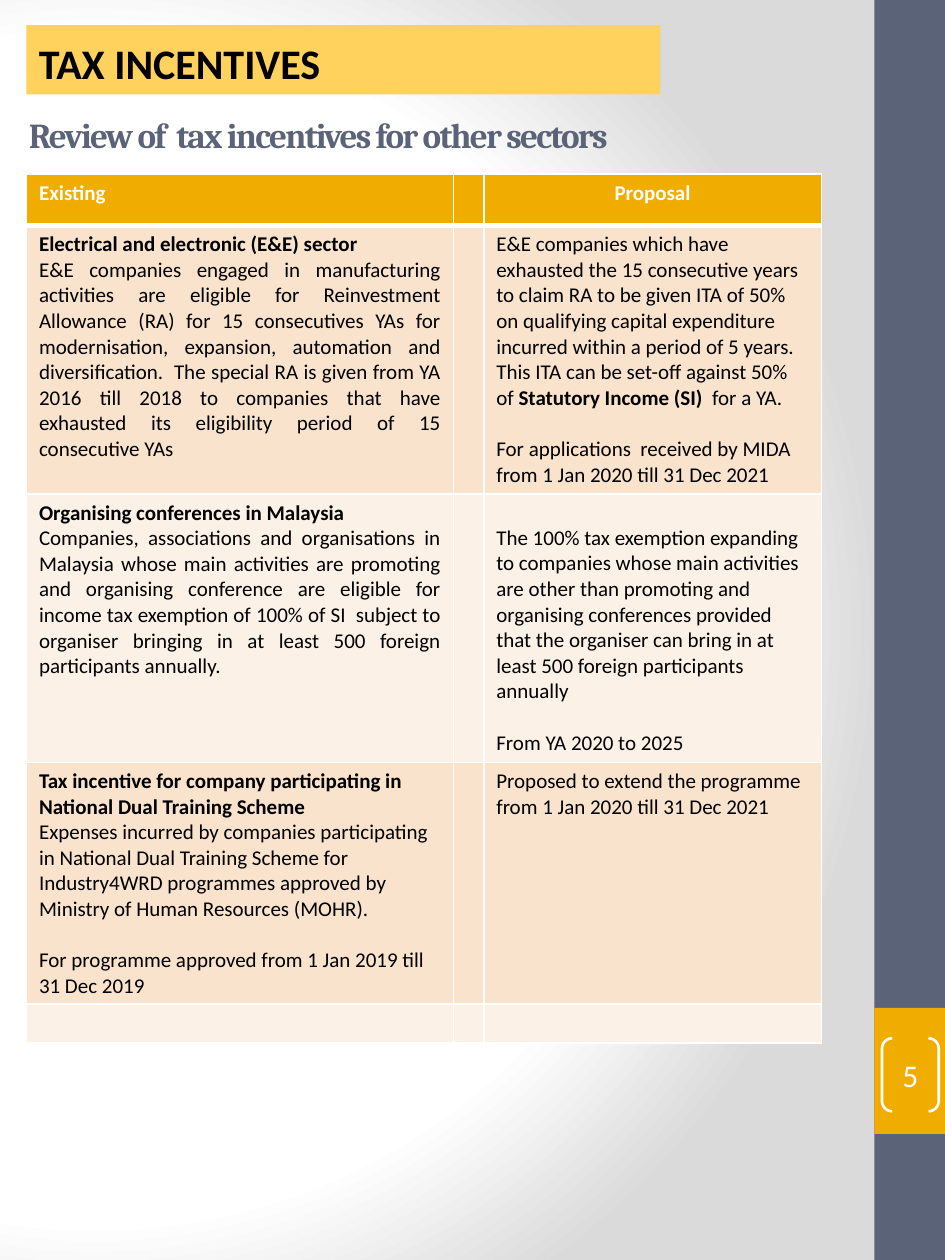
"""Build the slide on the review of tax incentives for other sectors."""
from dataclasses import dataclass

from lxml.etree import SubElement
from pptx import Presentation
from pptx.dml.color import RGBColor
from pptx.enum.shapes import MSO_SHAPE as Shape
from pptx.enum.text import MSO_ANCHOR as Anchor, PP_ALIGN as Align
from pptx.oxml import parse_xml
from pptx.oxml.ns import nsdecls, qn
from pptx.util import Inches, Pt

COLORS = {
    "white": "FFFFFF", "haze": "DADADA", "slate": "5A6378", "amber": "F0AD00",
    "banner": "FFD25D", "black": "000000", "peach": "F9E3CC", "cream": "FCF1E7",
}
BLANK_LINE = 14.65


@dataclass(frozen=True)
class Para:
    """A paragraph whose runs at odd positions are bold."""
    runs: tuple
    align: Align = Align.LEFT
    gap: float = 0


@dataclass(frozen=True)
class Cell:
    """A table cell with its paragraphs and top margin."""
    paras: tuple = ()
    top: float = 0.05


@dataclass(frozen=True)
class Row:
    """A table row with its height, fill and outer cells."""
    height: float
    fill: str
    existing: Cell = Cell()
    proposal: Cell = Cell()
    ink: str = "black"


def plain(text: str, **layout) -> Para:
    """Return a regular paragraph."""
    return Para((text,), **layout)


def bold(text: str, **layout) -> Para:
    """Return a bold paragraph."""
    return Para(("", text), **layout)


ROWS = (
    Row(0.41, "amber", Cell((bold("Existing"),)),
        Cell((bold("Proposal", align=Align.CENTER),)), "white"),
    Row(2.13, "peach",
        Cell((
            bold("Electrical and electronic (E&E) sector", align=Align.JUSTIFY),
            plain("E&E companies engaged in manufacturing activities are eligible for "
                  "Reinvestment Allowance (RA) for 15 consecutives YAs for modernisation, "
                  "expansion, automation and diversification.  The special RA is given from "
                  "YA 2016 till 2018 to companies that have exhausted its eligibility period "
                  "of 15 consecutive YAs", align=Align.JUSTIFY),
        )),
        Cell((
            Para(("E&E companies which have exhausted the 15 consecutive years to claim RA "
                  "to be given ITA of 50% on qualifying capital expenditure incurred within "
                  "a period of 5 years.  This ITA can be set-off against 50% of ",
                  "Statutory Income (SI)  ", "for a YA.")),
            plain("For applications  received by MIDA from 1 Jan 2020 till 31 Dec 2021",
                  gap=BLANK_LINE),
        ))),
    Row(2.13, "cream",
        Cell((
            bold("Organising conferences in Malaysia", align=Align.JUSTIFY),
            plain("Companies, associations and organisations in Malaysia whose main "
                  "activities are promoting and organising conference are eligible for "
                  "income tax exemption of 100% of SI  subject to organiser bringing in at "
                  "least 500 foreign participants annually.", align=Align.JUSTIFY),
        )),
        Cell((
            plain("The 100% tax exemption expanding to companies whose main activities are "
                  "other than promoting and organising conferences provided that the "
                  "organiser can bring in at least 500 foreign participants annually"),
            plain("From YA 2020 to 2025", gap=BLANK_LINE),
        ), top=0.25)),
    Row(1.92, "peach",
        Cell((
            bold("Tax incentive for company participating in National Dual Training Scheme"),
            plain("Expenses incurred by companies participating in National Dual Training "
                  "Scheme for Industry4WRD programmes approved by Ministry of Human "
                  "Resources (MOHR)."),
            plain("For programme approved from 1 Jan 2019 till 31 Dec 2019", gap=BLANK_LINE),
        )),
        Cell((plain("Proposed to extend the programme from 1 Jan 2020 till 31 Dec 2021"),))),
    Row(0.31, "cream"),
)


def rgb(name: str) -> RGBColor:
    """Return a named colour."""
    return RGBColor.from_string(COLORS[name])


def write(frame, paras: tuple, *, size: float = 12, color: str = "black",
          font: str = "Calibri", spacing: int = 0) -> None:
    """Fill a text frame with formatted paragraphs."""
    frame.word_wrap = True
    for index, para in enumerate(paras):
        line = frame.add_paragraph() if index else frame.paragraphs[0]
        line.alignment = para.align
        line.space_before = Pt(para.gap)
        for position, text in enumerate(para.runs):
            if not text:
                continue
            run = line.add_run()
            run.text = text
            run.font.size, run.font.name = Pt(size), font
            run.font.bold = position % 2 == 1
            run.font.color.rgb = rgb(color)
            if spacing:
                run.font._element.set("spc", str(spacing))
    if not paras:
        SubElement(frame.paragraphs[0]._p, qn("a:endParaRPr"), sz=str(size * 100))


def paint_background(slide) -> None:
    """Give the slide a circular gradient."""
    stops = "".join(
        f'<a:gs pos="{pos}000"><a:srgbClr val="{COLORS[name]}"/></a:gs>'
        for pos, name in ((0, "white"), (75, "white"), (100, "haze")))
    slide._element.cSld.insert(0, parse_xml(
        f'<p:bg {nsdecls("p", "a")}><p:bgPr><a:gradFill rotWithShape="1">'
        f'<a:gsLst>{stops}</a:gsLst><a:path path="circle">'
        '<a:fillToRect l="20000" t="50000" r="100000" b="50000"/></a:path>'
        '</a:gradFill><a:effectLst/></p:bgPr></p:bg>'))


def add_block(slide, left: float, top: float, width: float, height: float, fill: str):
    """Draw a filled rectangle without outline."""
    block = slide.shapes.add_shape(
        Shape.RECTANGLE, Inches(left), Inches(top), Inches(width), Inches(height))
    block.shadow.inherit = False
    block.fill.solid()
    block.fill.fore_color.rgb = rgb(fill)
    block.line.fill.background()
    return block


def add_borders(cell, bottom: float) -> None:
    """Put white borders around a table cell."""
    sides = (("lnL", 1), ("lnR", 1), ("lnT", 1), ("lnB", bottom))
    for index, (side, width) in enumerate(sides):
        cell._tc.get_or_add_tcPr().insert(index, parse_xml(
            f'<a:{side} {nsdecls("a")} w="{Pt(width)}"><a:solidFill>'
            f'<a:srgbClr val="{COLORS["white"]}"/></a:solidFill></a:{side}>'))


def add_incentives(slide) -> None:
    """Draw the table of existing and proposed incentives."""
    widths = (3.39, 0.24, 2.68)
    table = slide.shapes.add_table(
        len(ROWS), len(widths), Inches(0.21), Inches(1.38), Inches(sum(widths)),
        Inches(sum(row.height for row in ROWS))).table
    for column, width in zip(table.columns, widths):
        column.width = Inches(width)
    for index, row in enumerate(ROWS):
        table.rows[index].height = Inches(row.height)
        contents = (row.existing, Cell(), row.proposal)
        for cell, content in zip(table.rows[index].cells, contents):
            cell.fill.solid()
            cell.fill.fore_color.rgb = rgb(row.fill)
            cell.margin_top = Inches(content.top)
            add_borders(cell, 1 if index else 3)
            write(cell.text_frame, content.paras, color=row.ink)


def add_page_number(slide) -> None:
    """Draw the bracketed page number."""
    bracket = slide.shapes.add_shape(
        Shape.DOUBLE_BRACKET, Inches(7), Inches(8.24), Inches(0.45), Inches(0.58))
    bracket.shadow.inherit = False
    bracket.adjustments[0] = 0.18
    bracket.fill.background()
    bracket.line.color.rgb, bracket.line.width = rgb("white"), Pt(1.5)
    frame = bracket.text_frame
    frame.margin_left = frame.margin_right = frame.margin_top = frame.margin_bottom = 0
    frame.vertical_anchor = Anchor.MIDDLE
    write(frame, (plain("5", align=Align.CENTER),), size=18, color="white")


def main() -> None:
    """Assemble and save the slide."""
    deck = Presentation()
    deck.slide_width, deck.slide_height = Inches(7.5), Inches(10)
    slide = deck.slides.add_slide(deck.slide_layouts[6])
    paint_background(slide)
    add_block(slide, 6.94, 0, 0.56, 10, "slate")
    add_block(slide, 6.94, 8, 0.56, 1, "amber")
    title = slide.shapes.add_textbox(Inches(0.13), Inches(0.85), Inches(6.61), Inches(0.48))
    write(title.text_frame, (bold("Review of  tax incentives for other sectors"),),
          size=20, color="slate", font="Cambria", spacing=-100)
    banner = add_block(slide, 0.21, 0.2, 5.03, 0.55, "banner")
    banner.text_frame.vertical_anchor = Anchor.BOTTOM
    write(banner.text_frame, (bold("TAX INCENTIVES"),), size=24)
    add_incentives(slide)
    add_page_number(slide)
    deck.save("out.pptx")


if __name__ == "__main__":
    main()
